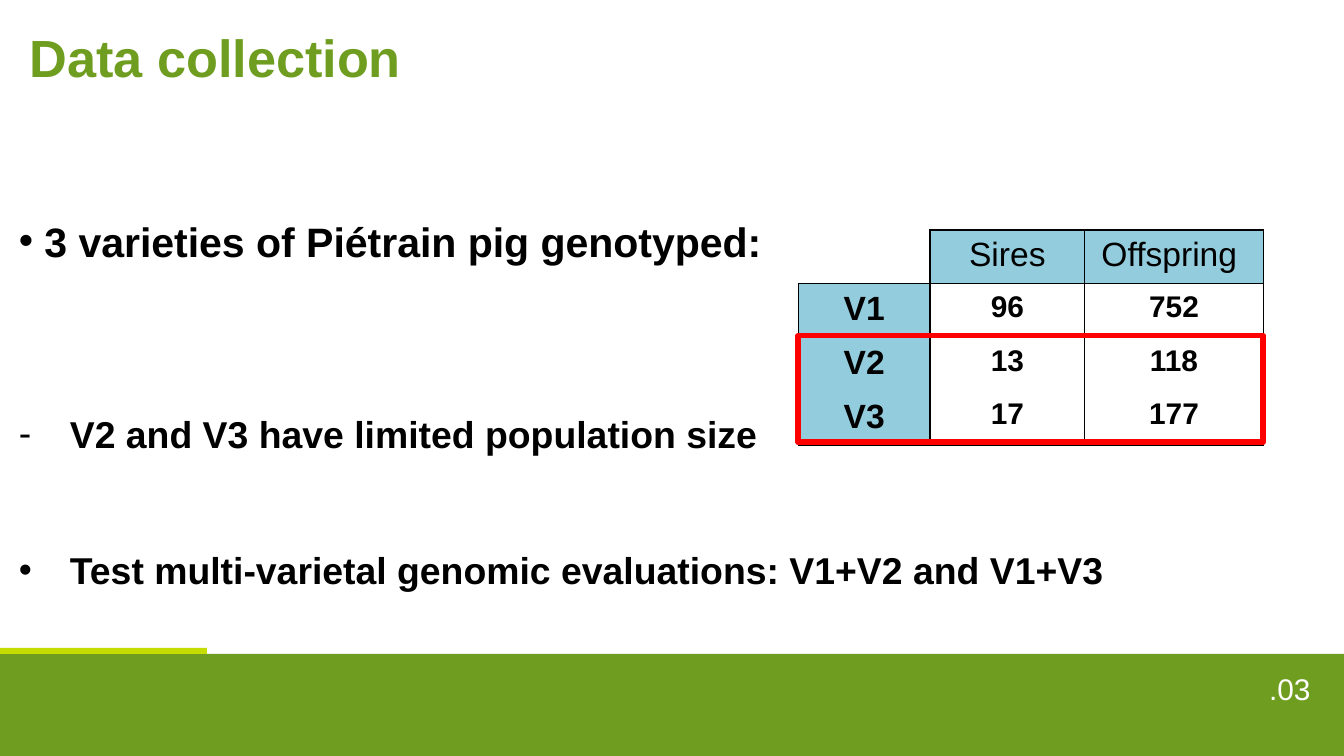
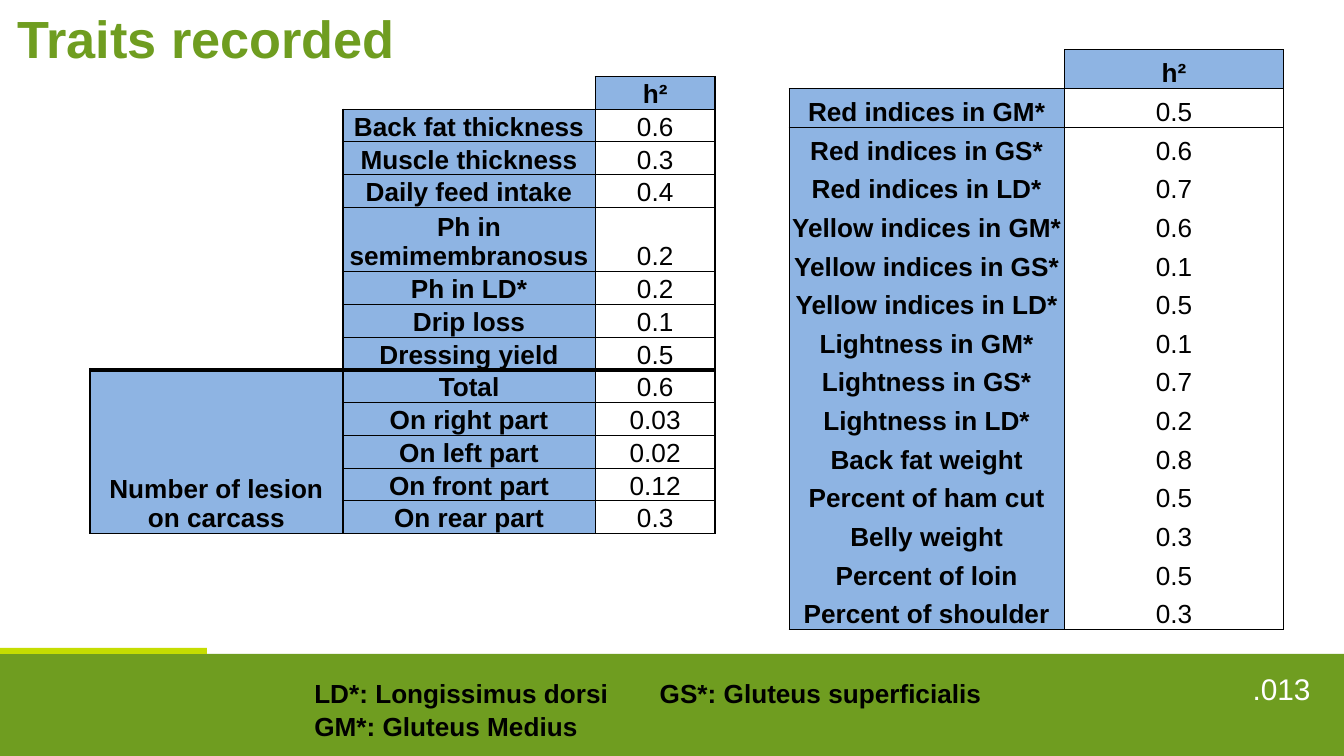
"""Build the data collection and recorded traits slides."""
from dataclasses import dataclass, field
from typing import Any, NamedTuple

from lxml.etree import SubElement
from pptx import Presentation
from pptx.dml.color import RGBColor as Color
from pptx.enum.shapes import MSO_SHAPE as Shape
from pptx.enum.text import MSO_ANCHOR as Anchor, MSO_AUTO_SIZE as AutoSize, PP_ALIGN as Align
from pptx.oxml.ns import qn
from pptx.util import Emu, Inches, Pt

WIDTH, HEIGHT = Inches(10), Inches(5.625)


class TextFormat(NamedTuple):
    """Type size, weight and colour of a run."""
    size: float
    bold: bool = False
    color: str = "000000"


@dataclass(frozen=True)
class Theme:
    """Colours and type sizes of the whole presentation."""
    font: str = "Arial"
    green: str = "6F9D20"
    lime: str = "C5DD01"
    white: str = "FFFFFF"
    black: str = "000000"
    red: str = "FF0000"
    aqua: str = "93CDDD"
    blue: str = "8EB4E3"
    title: TextFormat = TextFormat(28, True, "6F9D20")
    page: TextFormat = TextFormat(16, False, "FFFFFF")
    lead: TextFormat = TextFormat(22, True)
    point: TextFormat = TextFormat(20, True)
    count_header: TextFormat = TextFormat(18)
    count_label: TextFormat = TextFormat(18, True)
    count: TextFormat = TextFormat(16, True)
    trait: TextFormat = TextFormat(14, True)
    trait_value: TextFormat = TextFormat(14)


THEME = Theme()


class Box(NamedTuple):
    """Left, top, width and height in hundredths of the slide."""
    left: float
    top: float
    width: float
    height: float


class Bullet(NamedTuple):
    """A list item with its mark, hanging indent and space before."""
    mark: str
    text: str
    style: TextFormat
    indent: float
    gap: float


@dataclass(frozen=True)
class Grid:
    """A table with label columns on the left and values on the right."""
    left: float
    top: float
    columns: tuple[float, ...]
    row_height: float
    rows: tuple[tuple[str, ...], ...]
    fill: str
    header: TextFormat
    label: TextFormat
    value: TextFormat
    line: float
    label_columns: int = 1
    tight: bool = True
    ruled: bool = False
    thick_row: int = -1
    tall_rows: dict[int, float] = field(default_factory=dict)
    merges: tuple[tuple[int, int], ...] = ()


BAND = Box(0, 86.5, 100, 13.5)
ACCENT = Box(0, 85.7, 15.4, 0.8)
PAGE = Box(86.2, 87.8, 12.3, 4.8)
BODY = Box(0.4, 14, 99.6, 83.7)
HIGHLIGHT = Box(59.4, 44.4, 34.6, 14.1)
LEGEND = Box(22.4, 88.7, 56.7, 10.1)
LEGEND_TAB = 25.7

BULLETS = (
    Bullet("•", "3 varieties of Piétrain pig genotyped:", THEME.lead, 1.9, 0),
    Bullet("-", "V2 and V3 have limited population size", THEME.point, 3.8, 78),
    Bullet("•", "Test multi-varietal genomic evaluations: V1+V2 and V1+V3",
           THEME.point, 3.8, 49),
)

VARIETIES = Grid(
    59.4, 30.4, (9.8, 11.5, 13.3), 7.1,
    (("", "Sires", "Offspring "), ("V1", "96", "752"),
     ("V2", "13", "118"), ("V3", "17", "177")),
    THEME.aqua, THEME.count_header, THEME.count_label, THEME.count, 1, tight=False,
)

TRAITS = Grid(
    6.7, 10.1, (18.8, 18.8, 8.9), 4.27,
    (("", "", "h²"),
     ("", "Back fat thickness", "0.6"),
     ("", "Muscle thickness", "0.3"),
     ("", "Daily feed intake", "0.4"),
     ("", "Ph in semimembranosus", "0.2"),
     ("", "Ph in LD*", "0.2"),
     ("", "Drip loss", "0.1"),
     ("", "Dressing yield", "0.5"),
     ("Number of lesion on carcass", "Total", "0.6"),
     ("", "On right part", "0.03"),
     ("", "On left part", "0.02"),
     ("", "On front part", "0.12"),
     ("", "On rear part", "0.3")),
    THEME.blue, THEME.trait, THEME.trait, THEME.trait_value, 1,
    label_columns=2, ruled=True, thick_row=8, tall_rows={4: 8.36}, merges=((1, 7), (8, 12)),
)

MEAT = Grid(
    58.7, 6.6, (20.5, 16.3), 5.11,
    (("", "h²"),
     ("Red indices in GM*", "0.5"),
     ("Red indices in GS*", "0.6"),
     ("Red indices in LD*", "0.7"),
     ("Yellow indices in GM*", "0.6"),
     ("Yellow indices in GS*", "0.1"),
     ("Yellow indices in LD*", "0.5"),
     ("Lightness in GM*", "0.1"),
     ("Lightness in GS*", "0.7"),
     ("Lightness in LD*", "0.2"),
     ("Back fat weight", "0.8"),
     ("Percent of ham cut", "0.5"),
     ("Belly weight", "0.3"),
     ("Percent of loin", "0.5"),
     ("Percent of shoulder", "0.3")),
    THEME.blue, THEME.trait, THEME.trait, THEME.trait_value, 0.5,
)


def across(columns: float) -> Emu:
    """Turn hundredths of the slide width into a length."""
    return Emu(round(WIDTH * columns / 100))


def down(rows: float) -> Emu:
    """Turn hundredths of the slide height into a length."""
    return Emu(round(HEIGHT * rows / 100))


def place(box: Box) -> tuple[Emu, Emu, Emu, Emu]:
    """Turn a box into lengths."""
    return across(box.left), down(box.top), across(box.width), down(box.height)


def assign(target: Any, values: dict[str, Any]) -> None:
    """Set each named attribute of the target."""
    for name, value in values.items():
        setattr(target, name, value)


def write(paragraph: Any, text: str, style: TextFormat) -> None:
    """Add a formatted run to a paragraph."""
    run = paragraph.add_run()
    run.text = text
    assign(run.font, {"name": THEME.font, "size": Pt(style.size), "bold": style.bold})
    run.font.color.rgb = Color.from_string(style.color)


def fill_placeholder(shape: Any, box: Box, top_margin: float = 0.05) -> Any:
    """Move a placeholder and return its text frame, set to start at the top."""
    assign(shape, dict(zip(("left", "top", "width", "height"), place(box))))
    frame = shape.text_frame
    assign(frame, {"word_wrap": True, "auto_size": AutoSize.NONE,
                   "vertical_anchor": Anchor.TOP, "margin_top": Inches(top_margin)})
    return frame


def add_rectangle(slide: Any, box: Box, fill: str = "", line: str = "") -> None:
    """Draw a rectangle that is either filled or outlined."""
    shape = slide.shapes.add_shape(Shape.RECTANGLE, *place(box))
    shape.shadow.inherit = False
    if fill:
        shape.fill.solid()
        shape.fill.fore_color.rgb = Color.from_string(fill)
        shape.line.fill.background()
    else:
        shape.fill.background()
        shape.line.color.rgb = Color.from_string(line)
        shape.line.width = Pt(3)


def add_text_box(slide: Any, box: Box) -> Any:
    """Add a wrapping text box and return its text frame."""
    frame = slide.shapes.add_textbox(*place(box)).text_frame
    frame.word_wrap = True
    return frame


def start_slide(presentation: Any, layout: int, title: str, box: Box, page: str) -> Any:
    """Add a slide with its title, footer bands and page number."""
    slide = presentation.slides.add_slide(presentation.slide_layouts[layout])
    paragraph = fill_placeholder(slide.shapes.title, box).paragraphs[0]
    paragraph.alignment = Align.LEFT
    write(paragraph, title, THEME.title)
    add_rectangle(slide, BAND, THEME.green)
    add_rectangle(slide, ACCENT, THEME.lime)
    number = add_text_box(slide, PAGE).paragraphs[0]
    number.alignment = Align.RIGHT
    write(number, page, THEME.page)
    return slide


def write_bullets(frame: Any, bullets: tuple[Bullet, ...]) -> None:
    """Fill a text frame with marked paragraphs."""
    for index, bullet in enumerate(bullets):
        paragraph = frame.add_paragraph() if index else frame.paragraphs[0]
        paragraph.space_before = Pt(bullet.gap)
        properties = paragraph._p.get_or_add_pPr()
        indent = across(bullet.indent)
        properties.set("marL", str(indent))
        properties.set("indent", str(-indent))
        SubElement(properties, qn("a:buFont"), typeface=THEME.font)
        SubElement(properties, qn("a:buChar"), char=bullet.mark)
        write(paragraph, bullet.text, bullet.style)


def border_widths(grid: Grid, row: int, column: int, spanned: bool) -> dict[str, float]:
    """Give the line width of each bordered side of a cell."""
    last = len(grid.rows) - 1
    widths: dict[str, float] = {}
    if grid.rows[row][column] or spanned:
        widths = {"L": grid.line, "R": grid.line}
        if not spanned and (grid.ruled or row < 2):
            widths["T"] = 0.5 if grid.ruled else grid.line
        if row in (0, last) or (grid.ruled and not spanned):
            widths["B"] = 0.5 if grid.ruled else grid.line
    if row == grid.thick_row:
        widths["T"] = 2.25
    if row == grid.thick_row - 1:
        widths["B"] = 2.25
    return widths


def draw_borders(cell: Any, widths: dict[str, float]) -> None:
    """Add black border lines to a cell."""
    properties = cell._tc.get_or_add_tcPr()
    for side in "LRTB":
        if side in widths:
            line = SubElement(properties, qn(f"a:ln{side}"), w=str(Pt(widths[side])))
            SubElement(SubElement(line, qn("a:solidFill")), qn("a:srgbClr"), val=THEME.black)


def draw_cell(cell: Any, grid: Grid, row: int, column: int) -> None:
    """Format and fill one table cell."""
    text = grid.rows[row][column]
    is_label = column < grid.label_columns
    style = grid.header if row == 0 else grid.label if is_label else grid.value
    if grid.tight:
        edge = Inches(0.01)
        assign(cell, {"margin_left": edge, "margin_right": edge, "margin_top": edge,
                      "margin_bottom": 0, "vertical_anchor": Anchor.BOTTOM})
    spanned = any(first >= grid.thick_row > 0 and first < row <= end and column == 0
                  for first, end in grid.merges)
    draw_borders(cell, border_widths(grid, row, column, spanned))
    paragraph = cell.text_frame.paragraphs[0]
    paragraph.alignment = Align.CENTER
    if text:
        write(paragraph, text, style)
        cell.fill.solid()
        color = grid.fill if row == 0 or is_label else THEME.white
        cell.fill.fore_color.rgb = Color.from_string(color)
    else:
        SubElement(paragraph._p, qn("a:endParaRPr"), sz=str(style.size * 100))
        cell.fill.background()


def add_grid(slide: Any, grid: Grid) -> None:
    """Draw a table from its description."""
    heights = [grid.tall_rows.get(row, grid.row_height) for row in range(len(grid.rows))]
    box = Box(grid.left, grid.top, sum(grid.columns), sum(heights))
    table = slide.shapes.add_table(len(heights), len(grid.columns), *place(box)).table
    assign(table, {"first_row": False, "horz_banding": False})
    table._tbl.tblPr.find(qn("a:tableStyleId")).text = "{2D5ABB26-0587-4C30-8999-92F81FD0307C}"
    for column, width in enumerate(grid.columns):
        table.columns[column].width = across(width)
    for row, height in enumerate(heights):
        table.rows[row].height = down(height)
        for column in range(len(grid.columns)):
            draw_cell(table.cell(row, column), grid, row, column)
    for first, end in grid.merges:
        table.cell(first, 0).merge(table.cell(end, 0))


def add_legend(slide: Any) -> None:
    """Write the muscle abbreviations over the footer band."""
    frame = add_text_box(slide, LEGEND)
    first, second = frame.paragraphs[0], frame.add_paragraph()
    tabs = SubElement(first._p.get_or_add_pPr(), qn("a:tabLst"))
    SubElement(tabs, qn("a:tab"), pos=str(across(LEGEND_TAB)), algn="l")
    write(first, "LD*: Longissimus dorsi\tGS*: Gluteus superficialis", THEME.trait)
    second.space_before = Pt(1)
    write(second, "GM*: Gluteus Medius", THEME.trait)


def main() -> None:
    """Build and save the presentation."""
    presentation = Presentation()
    assign(presentation, {"slide_width": WIDTH, "slide_height": HEIGHT})
    collection = start_slide(presentation, 1, "Data collection", Box(1.2, 2.5, 98.8, 10.1), ".03")
    write_bullets(fill_placeholder(collection.placeholders[1], BODY, 0.82), BULLETS)
    add_grid(collection, VARIETIES)
    add_rectangle(collection, HIGHLIGHT, line=THEME.red)
    traits = start_slide(presentation, 5, "Traits recorded", Box(0.3, 0, 99.7, 10.1), ".013")
    traits.shapes.title.fill.solid()
    traits.shapes.title.fill.fore_color.rgb = Color.from_string(THEME.white)
    for grid in (TRAITS, MEAT):
        add_grid(traits, grid)
    add_legend(traits)
    presentation.save("out.pptx")


if __name__ == "__main__":
    main()
